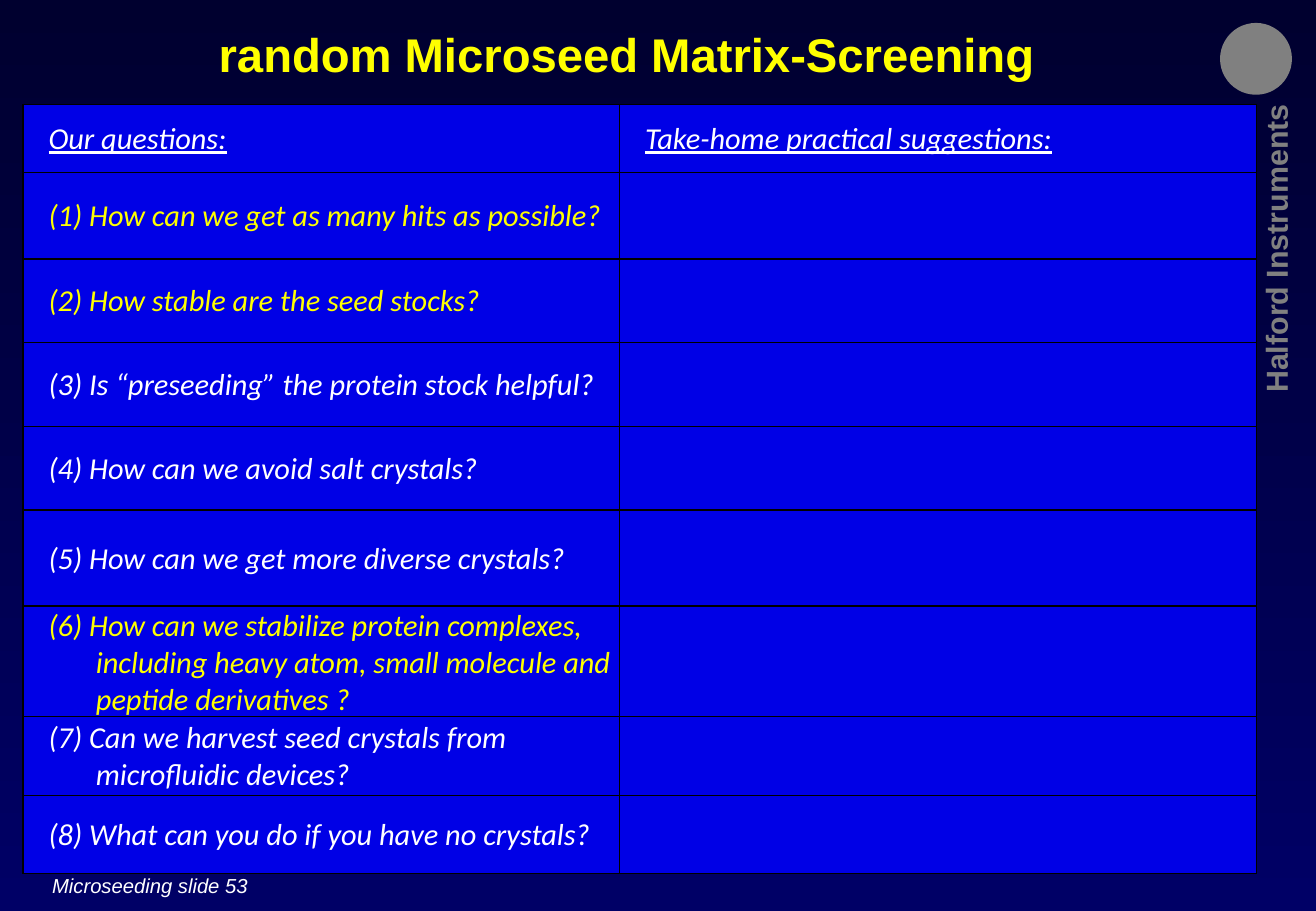
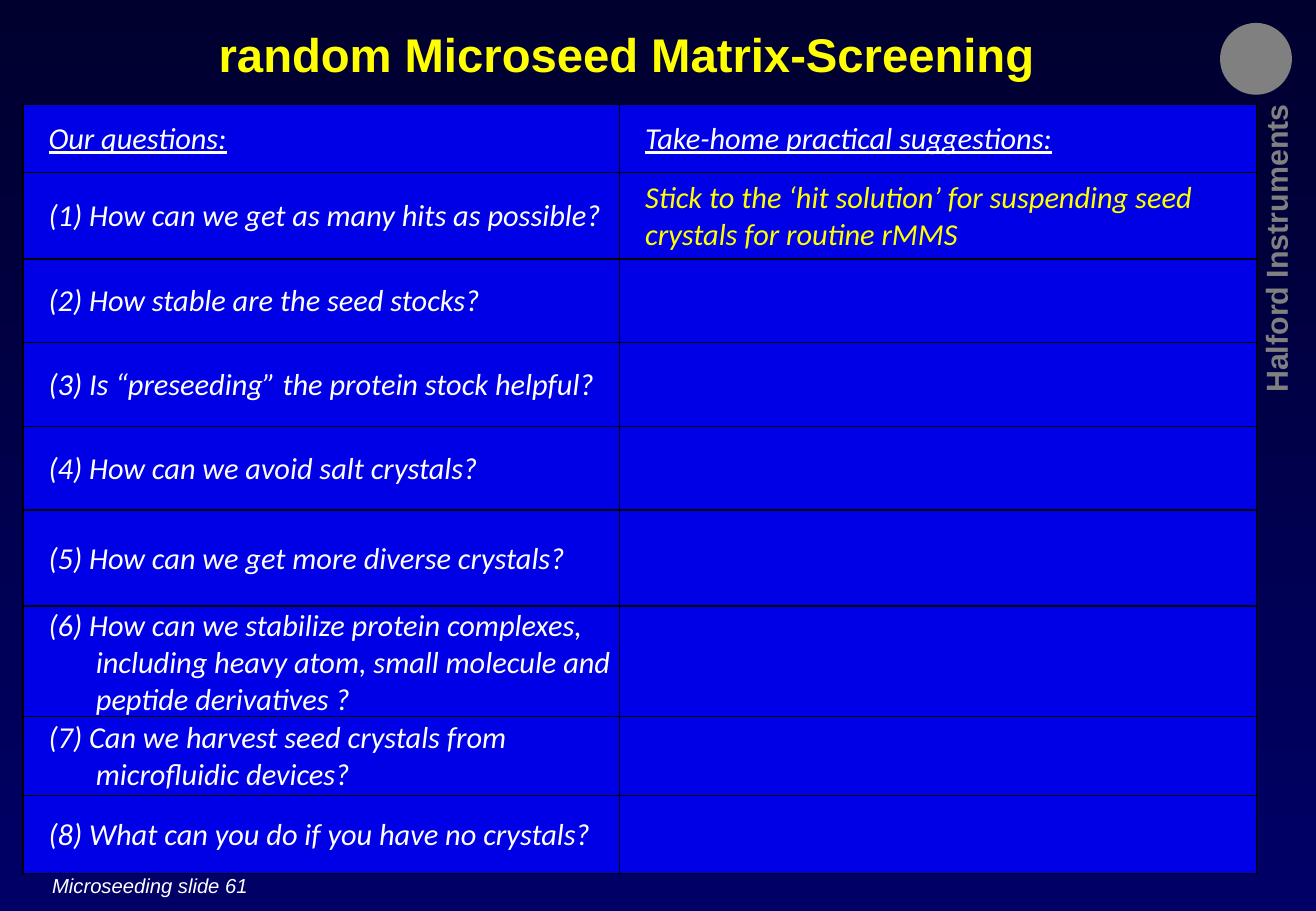
from dataclasses import dataclass

from lxml import etree
from pptx import Presentation
from pptx import util as u
from pptx.dml.color import RGBColor
from pptx.enum import shapes, text
from pptx.oxml.ns import qn


@dataclass(frozen=True)
class Theme:
    top: str = "00002F"
    bottom: str = "000066"
    cell: str = "0000E6"
    border: str = "000000"
    accent: str = "FFFF00"
    plain: str = "FFFFFF"
    muted: str = "808080"
    head_font: str = "Arial"
    body_font: str = "Calibri"
    title_size: int = 28
    body_size: int = 18
    foot_size: int = 12


T = Theme()
TITLE = "random Microseed Matrix-Screening"
HEADINGS = ("Our questions:", "Take-home practical suggestions:")
QUESTIONS = (
    "How can we get as many hits as possible?",
    "How stable are the seed stocks?",
    "Is “preseeding” the protein stock helpful?",
    "How can we avoid salt crystals?",
    "How can we get more diverse crystals?",
    "How can we stabilize protein complexes, including heavy atom, "
    "small molecule and peptide derivatives ?",
    "Can we harvest seed crystals from microfluidic devices?",
    "What can you do if you have no crystals?",
)
# Percent of the slide's width and height
COLS = (45.34, 48.38)
ROWS = (7.47, 9.47, 9.2, 9.2, 9.2, 10.53, 12.13, 8.67, 8.53)
INDENT, HANG = 0.2, 0.39  # inches


def rgb(value):
    return RGBColor.from_string(value)


def write(tf, words, *, size, color, font=T.head_font, bold=False,
          italic=False, underline=False, align=text.PP_ALIGN.LEFT, hang=None):
    """Fill a text frame; hang (inches) sets a hanging indent past INDENT."""
    p = tf.paragraphs[0]
    p.alignment = align
    if hang is not None:
        pPr = p._p.get_or_add_pPr()
        pPr.set("marL", str(u.Inches(INDENT + hang)))
        pPr.set("indent", str(u.Inches(-hang)))
    r = p.add_run()
    r.text = words
    f = r.font
    f.name, f.size, f.color.rgb = font, u.Pt(size), rgb(color)
    f.bold, f.italic, f.underline = bold, italic, underline


def set_borders(cell, color, width=1):
    tcPr = cell._tc.get_or_add_tcPr()
    for side in ("lnL", "lnR", "lnT", "lnB"):
        ln = etree.SubElement(tcPr, qn(f"a:{side}"), w=str(u.Pt(width)))
        fill = etree.SubElement(ln, qn("a:solidFill"))
        etree.SubElement(fill, qn("a:srgbClr"), val=color)


class Deck:
    def __init__(self):
        self.prs = Presentation()
        self.prs.slide_width, self.prs.slide_height = u.Inches(10.83), u.Inches(7.5)
        fill = self.prs.slide_master.background.fill
        fill.gradient()
        fill.gradient_angle = 270
        for stop, color in zip(fill.gradient_stops, (T.top, T.bottom)):
            stop.color.rgb = rgb(color)

    def x(self, pct):
        return round(self.prs.slide_width * pct / 100)

    def y(self, pct):
        return round(self.prs.slide_height * pct / 100)

    def box(self, left, top, width, height):
        """Turn percentages of the slide into lengths."""
        return self.x(left), self.y(top), self.x(width), self.y(height)

    def new_slide(self, number):
        self.s = self.prs.slides.add_slide(self.prs.slide_layouts[5])
        self.label("Halford Instruments", (83.1, 27.47, 27.7, 5.33), rotation=270,
                   size=T.body_size, color=T.muted, bold=True,
                   align=text.PP_ALIGN.RIGHT)
        self.label(f"Microseeding slide {number}", (3.05, 95.2, 18.5, 4),
                   size=T.foot_size, color=T.plain, italic=True)
        self.badge((92.9, 2.8, 5.08, 7.33))

    def label(self, words, place, rotation=0, **style):
        sp = self.s.shapes.add_textbox(*self.box(*place))
        sp.rotation = rotation
        sp.text_frame.word_wrap = True
        write(sp.text_frame, words, **style)

    def badge(self, place):
        sp = self.s.shapes.add_shape(shapes.MSO_SHAPE.OVAL, *self.box(*place))
        sp.shadow.inherit = False
        sp.fill.solid()
        sp.fill.fore_color.rgb = sp.line.color.rgb = rgb(T.muted)
        sp.line.width = u.Pt(3)

    def title(self, words):
        sp = self.s.shapes.title
        sp.left, sp.top, sp.width, sp.height = self.box(-2.4, 2.13, 100, 7.6)
        tf = sp.text_frame
        tf.auto_size = text.MSO_AUTO_SIZE.NONE
        tf.vertical_anchor = text.MSO_ANCHOR.TOP
        write(tf, words, size=T.title_size, color=T.accent, bold=True,
              align=text.PP_ALIGN.CENTER)

    def cell(self, cell, words, **style):
        cell.margin_left = cell.margin_right = cell.margin_top = u.Inches(0.01)
        cell.margin_bottom = 0
        cell.vertical_anchor = text.MSO_ANCHOR.MIDDLE
        set_borders(cell, T.border)
        cell.fill.solid()
        cell.fill.fore_color.rgb = rgb(T.cell)
        if words:
            write(cell.text_frame, words, size=T.body_size, font=T.body_font,
                  italic=True, **style)

    def question_table(self, highlighted, answers):
        """Highlighted holds question numbers; answers maps number to text."""
        place = self.box(1.75, 11.47, sum(COLS), sum(ROWS))
        tbl = self.s.shapes.add_table(len(ROWS), len(COLS), *place).table
        tbl.first_row = tbl.horz_banding = False
        for col, pct in zip(tbl.columns, COLS):
            col.width = self.x(pct)
        for row, pct in zip(tbl.rows, ROWS):
            row.height = self.y(pct)
        for c, heading in enumerate(HEADINGS):
            self.cell(tbl.cell(0, c), heading, color=T.plain, underline=True, hang=0)
        for n, question in enumerate(QUESTIONS, 1):
            self.cell(tbl.cell(n, 0), f"({n}) {question}", hang=HANG,
                      color=T.accent if n in highlighted else T.plain)
            self.cell(tbl.cell(n, 1), answers.get(n), color=T.accent, hang=0)


def main():
    deck = Deck()
    answer = "Stick to the ‘hit solution’ for suspending seed crystals for routine rMMS"
    for number, highlighted, answers in ((53, {1, 2, 6}, {}), (61, set(), {1: answer})):
        deck.new_slide(number)
        deck.title(TITLE)
        deck.question_table(highlighted, answers)
    deck.prs.save("out.pptx")


if __name__ == "__main__":
    main()
